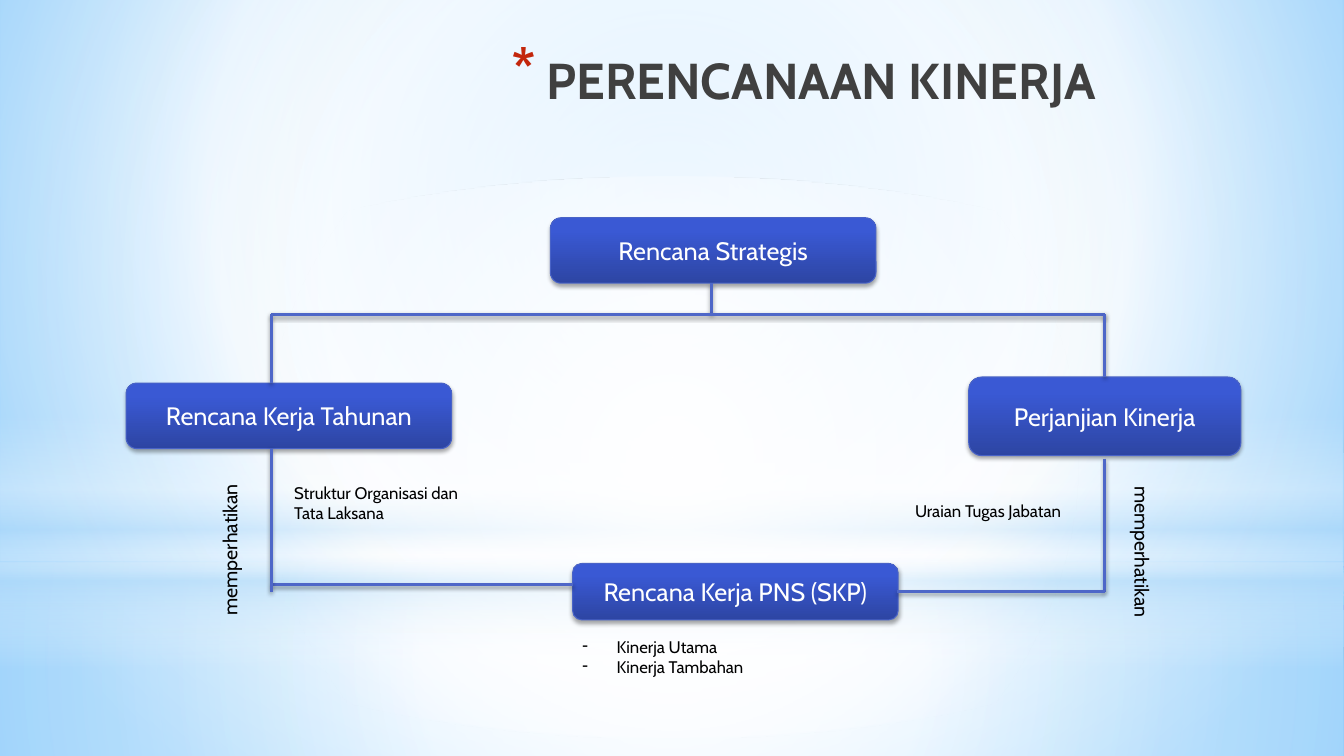
from pptx import Presentation, util as u
from pptx.dml import color
from pptx.enum import shapes, text
from pptx.oxml import parse_xml, ns

WIDE, HIGH = u.Inches(13.33), u.Inches(7.5)
MID = [50, 50, 50, 50]
LEFT, RIGHT, STEM = 20.18, 82.2, 52.95
FORK = 41.6


def tint(code):
    return color.RGBColor.from_string(code)


def grad(stops, ring=None, turn=0):
    tags = ""
    for at, code, *rest in stops:
        alpha = f'<a:alpha val="{rest[0] * 1000}"/>' if rest else ""
        tags += f'<a:gs pos="{at * 1000}"><a:srgbClr val="{code}">{alpha}</a:srgbClr></a:gs>'
    if ring:
        sides = " ".join(f'{k}="{v * 1000}"' for k, v in zip("ltrb", ring))
        way = f'<a:path path="circle"><a:fillToRect {sides}/></a:path>'
    else:
        way = f'<a:lin ang="{turn * 60000}" scaled="0"/>'
    return parse_xml(f'<a:gradFill {ns.nsdecls("a")} rotWithShape="1">'
                     f'<a:gsLst>{tags}</a:gsLst>{way}</a:gradFill>')


def swap(host, new):
    old = host.find(ns.qn("a:solidFill"))
    host.replace(old, new)


def shade(item, alpha, drop):
    item.element.spPr.append(parse_xml(
        f'<a:effectLst {ns.nsdecls("a")}><a:outerShdw blurRad="{u.Pt(3.1)}" '
        f'dist="{u.Pt(drop)}" dir="5400000" rotWithShape="0"><a:srgbClr val="000000">'
        f'<a:alpha val="{alpha * 1000}"/></a:srgbClr></a:outerShdw></a:effectLst>'))


def mark(para, sign, gap, hue=None, size=100):
    props = para._p.get_or_add_pPr()
    props.set("marL", str(u.Inches(gap)))
    props.set("indent", str(-u.Inches(gap)))
    if hue:
        props.append(parse_xml(f'<a:buClr {ns.nsdecls("a")}><a:srgbClr val="{hue}"/></a:buClr>'))
    props.append(parse_xml(f'<a:buSzPct {ns.nsdecls("a")} val="{size * 1000}"/>'))
    props.append(parse_xml(f'<a:buChar {ns.nsdecls("a")} char="{sign}"/>'))


def write(item, words, size=12, hue="000000", bold=False, side="LEFT",
          anchor="TOP", flow=None, bullet=None):
    frame = item.text_frame
    frame.word_wrap = True
    frame.vertical_anchor = getattr(text.MSO_ANCHOR, anchor)
    if flow:
        item.element.txBody.bodyPr.set("vert", flow)
    for i, line in enumerate(words.split("\n")):
        para = frame.add_paragraph() if i else frame.paragraphs[0]
        para.alignment = getattr(text.PP_ALIGN, side)
        if bullet:
            mark(para, *bullet)
        run = para.add_run()
        run.text = line
        font = run.font
        font.name, font.size, font.bold = "Cabin", u.Pt(size), bold
        font.color.rgb = tint(hue)


class Deck:
    edge, wire = "4963C7", "4E67C8"
    blue = [(0, "2D45A3"), (80, "3A59D4"), (100, "3758D7")]

    def __init__(self):
        self.show = Presentation()
        self.show.slide_width, self.show.slide_height = WIDE, HIGH
        self.page = self.show.slides.add_slide(self.show.slide_layouts[6])

    def place(self, *pcts):
        return [round(p / 100 * full) for p, full in zip(pcts, (WIDE, HIGH) * 2)]

    def back(self, stops, ring):
        self.page.background.fill.solid()
        swap(self.page.element.find(".//" + ns.qn("p:bgPr")), grad(stops, ring))

    def form(self, kind, at, *fill):
        item = self.page.shapes.add_shape(kind, *self.place(*at))
        item.fill.solid()
        swap(item.element.spPr, grad(*fill))
        return item

    def glow(self, at, stops, ring=None, turn=0, kind=shapes.MSO_SHAPE.RECTANGLE):
        item = self.form(kind, at, stops, ring, turn)
        item.line.fill.background()
        item.shadow.inherit = False

    def box(self, at, words):
        item = self.form(shapes.MSO_SHAPE.ROUNDED_RECTANGLE, at, self.blue, None, 270)
        item.line.color.rgb = tint(self.edge)
        item.line.width = u.Pt(0.75)
        shade(item, 35, 1.8)
        write(item, words, size=18, hue="FFFFFF", side="CENTER", anchor="MIDDLE")

    def link(self, *ends):
        item = self.page.shapes.add_connector(shapes.MSO_CONNECTOR.STRAIGHT, *self.place(*ends))
        item.line.color.rgb = tint(self.wire)
        item.line.width = u.Pt(2)
        shade(item, 38, 1.6)

    def note(self, at, words, **style):
        write(self.page.shapes.add_textbox(*self.place(*at)), words, **style)


def main():
    deck = Deck()
    deck.back([(0, "9ED5FF"), (60, "FFFFFF"), (100, "5BB9FF")], [20, 10, 20, 60])
    deck.glow((0, 74.4, 100, 25.6),
              [(0, "FFFFFF", 91), (37, "FFFFFF", 76), (100, "B4DCFA", 79)], MID)
    deck.glow((0, 0, 100, 74.4),
              [(0, "FFFFFF", 89), (48, "FFFFFF", 62), (100, "B4DCFA", 79)], MID)
    deck.glow((0, 54.93, 100, 33.33),
              [(0, "FFFFFF", 0), (29, "FFFFFF", 30), (45, "B4DCFA", 40),
               (55, "FFFFFF", 26), (65, "B4DCFA", 60), (100, "FFFFFF", 0)], turn=90)
    deck.glow((0, 23.33, 100, 74.4), [(0, "FFFFFF"), (56, "FFFFFF", 0)], MID,
              kind=shapes.MSO_SHAPE.OVAL)

    deck.note((11.03, 5.87, 71.25, 16.67), "PERENCANAAN KINERJA", size=36, hue="404040",
              bold=True, side="RIGHT", bullet=("*", 0.35, "C3260C", 128))

    for at, words in [
        ((40.95, 28.8, 24.23, 8.67), "Rencana Strategis"),
        ((72.08, 49.87, 20.25, 10.4), "Perjanjian Kinerja"),
        ((42.6, 74.53, 24.23, 7.47), "Rencana Kerja PNS (SKP)"),
        ((9.38, 50.67, 24.23, 8.67), "Rencana Kerja Tahunan"),
    ]:
        deck.box(at, words)

    deck.note((67.35, 65.6, 15.45, 4), "Uraian Tugas Jabatan")
    deck.note((42.6, 83.6, 24.23, 6.67), "Kinerja Utama\nKinerja Tambahan", bullet=("-", 0.34))
    deck.note((21.15, 63.2, 15.75, 6.67), "Struktur Organisasi dan Tata Laksana")

    for ends in [
        (STEM, 37.47, STEM, FORK),
        (LEFT, FORK, RIGHT, FORK),
        (LEFT, FORK, LEFT, 50.67),
        (RIGHT, FORK, RIGHT, 49.87),
        (LEFT, 77.33, 42.6, 77.33),
        (LEFT, 59.33, LEFT, 78.27),
        (RIGHT, 60.67, RIGHT, 78.27),
        (66.75, 78.27, RIGHT, 78.27),
    ]:
        deck.link(*ends)

    for x, y, flow in [(15.83, 60.8, "vert270"), (82.95, 61.07, "vert")]:
        deck.note((x, y, 3.3, 23.87), "memperhatikan", size=14, side="CENTER", flow=flow)

    deck.show.save("out.pptx")


if __name__ == "__main__":
    main()
